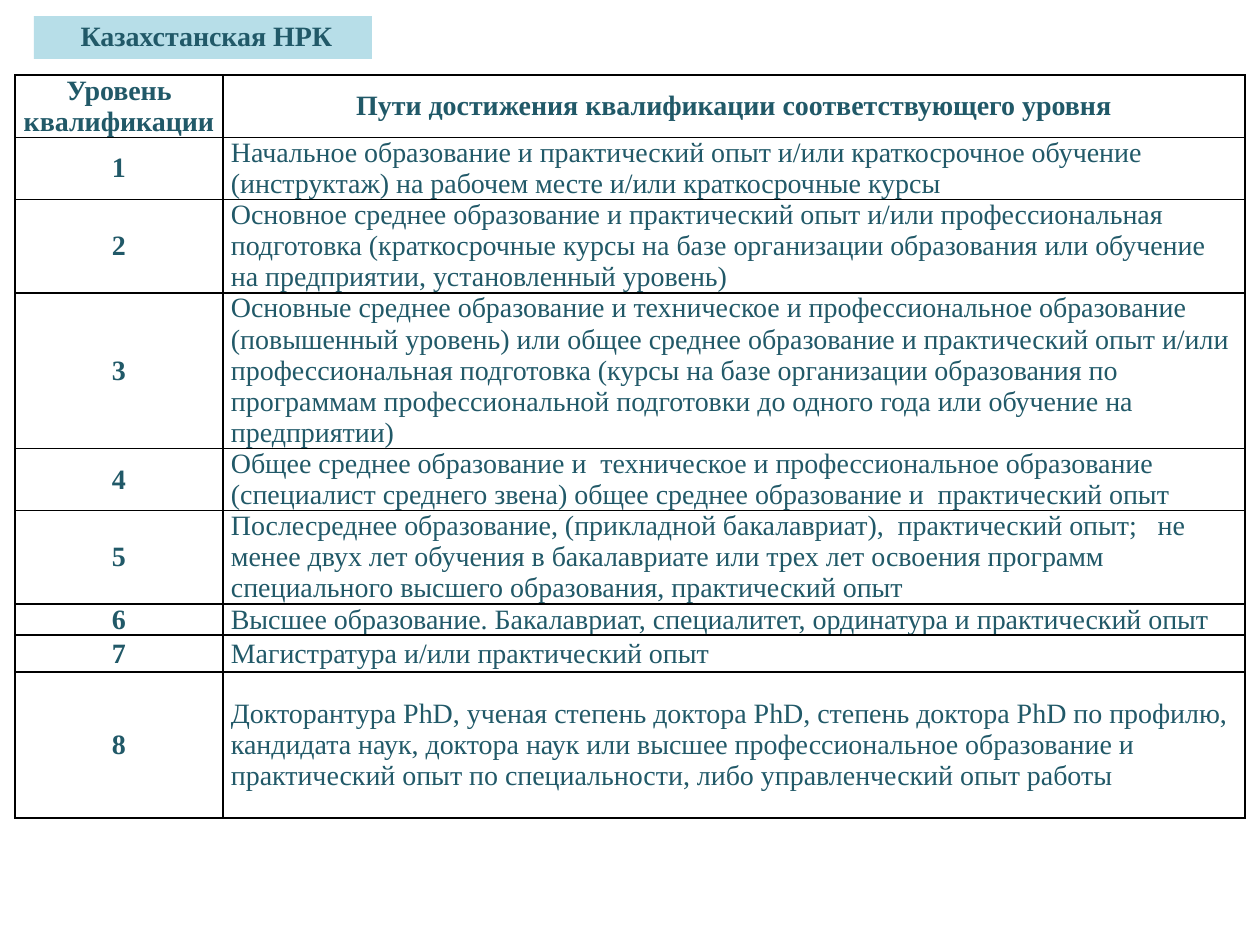
import pptx
import pptx.util
import pptx.dml.color
import pptx.enum.text
import pptx.oxml.ns
import lxml.etree
from dataclasses import dataclass

SCALE = 914400 // 126  # EMU in one px


@dataclass(frozen=True)
class Theme:
    font: str = "Times New Roman"
    size: int = 16
    ink: str = "215968"
    band: str = "B7DEE8"
    rule: str = "000000"
    width: int = 1


THEME = Theme()
ALIGN = pptx.enum.text.PP_ALIGN
MIDDLE = pptx.enum.text.MSO_ANCHOR.MIDDLE

TITLE = " Казахстанская НРК"
HEAD = ("Уровень квалификации",
        "Пути достижения квалификации соответствующего уровня")
# Ways to reach each level, from level 1 up
WAYS = [
    "Начальное образование и практический опыт и/или краткосрочное обучение "
    "(инструктаж) на рабочем месте и/или краткосрочные курсы",
    "Основное среднее образование и практический опыт и/или профессиональная "
    "подготовка (краткосрочные курсы на базе организации образования или обучение "
    "на предприятии, установленный уровень)",
    "Основные среднее образование и техническое и профессиональное образование "
    "(повышенный уровень) или общее среднее образование и практический опыт и/или "
    "профессиональная подготовка (курсы на базе организации образования по "
    "программам профессиональной подготовки до одного года или обучение на "
    "предприятии)",
    "Общее среднее образование и  техническое и профессиональное образование  "
    "(специалист среднего звена) общее среднее образование и  практический опыт",
    "Послесреднее образование, (прикладной бакалавриат),  практический опыт;   не "
    "менее двух лет обучения в бакалавриате или трех лет освоения программ "
    "специального высшего образования, практический опыт",
    "Высшее образование. Бакалавриат, специалитет, ординатура и практический опыт",
    "Магистратура и/или практический опыт",
    "Докторантура PhD, ученая степень доктора PhD, степень доктора PhD по профилю, "
    "кандидата наук, доктора наук или высшее профессиональное образование и "
    "практический опыт по специальности, либо управленческий опыт работы",
]
COLS = (208, 1022)
ROWS = (62, 62, 93, 155, 62, 93, 31, 37, 146)


def px(num):
    return pptx.util.Emu(num * SCALE)


def color(code):
    return pptx.dml.color.RGBColor.from_string(code)


def write(frame, text, bold, align):
    frame.text = text
    para = frame.paragraphs[0]
    para.alignment = align
    font = para.runs[0].font
    font.name = THEME.font
    font.size = pptx.util.Pt(THEME.size)
    font.bold = bold
    font.color.rgb = color(THEME.ink)
    return para


def border(cell):
    props = cell._tc.get_or_add_tcPr()
    name = pptx.oxml.ns.qn
    for side in ("a:lnL", "a:lnR", "a:lnT", "a:lnB"):
        line = lxml.etree.SubElement(props, name(side),
                                     w=str(pptx.util.Pt(THEME.width)))
        fill = lxml.etree.SubElement(line, name("a:solidFill"))
        lxml.etree.SubElement(fill, name("a:srgbClr"), val=THEME.rule)


def add_title(slide, text, left, top, width, height):
    title = slide.shapes.title
    title.left, title.top = px(left), px(top)
    title.width, title.height = px(width), px(height)
    title.fill.solid()
    title.fill.fore_color.rgb = color(THEME.band)
    frame = title.text_frame
    frame.word_wrap = True
    frame.auto_size = pptx.enum.text.MSO_AUTO_SIZE.NONE
    frame.vertical_anchor = MIDDLE
    para = write(frame, text, True, ALIGN.CENTER)
    para.line_spacing = 0.9
    para.space_before = pptx.util.Pt(0)


def add_cell(cell, text, bold, align):
    cell.margin_left = cell.margin_right = px(8)
    cell.margin_top = cell.margin_bottom = 0
    cell.vertical_anchor = MIDDLE
    border(cell)
    cell.fill.background()
    write(cell.text_frame, text, bold, align)


def add_grid(slide, left, top):
    data = [HEAD] + [(str(num), way) for num, way in enumerate(WAYS, 1)]
    table = slide.shapes.add_table(len(ROWS), len(COLS), px(left), px(top),
                                   px(sum(COLS)), px(sum(ROWS))).table
    table.first_row = table.horz_banding = False
    for col, width in zip(table.columns, COLS):
        col.width = px(width)
    for row, height in zip(table.rows, ROWS):
        row.height = px(height)
    for i, line in enumerate(data):
        for j, text in enumerate(line):
            # Header row and level numbers are bold and centred
            key = i == 0 or j == 0
            add_cell(table.cell(i, j), text, key,
                     ALIGN.CENTER if key else ALIGN.LEFT)


def main():
    deck = pptx.Presentation()
    deck.slide_width = pptx.util.Inches(10)
    deck.slide_height = pptx.util.Inches(7.5)
    slide = deck.slides.add_slide(deck.slide_layouts[5])
    add_title(slide, TITLE, 34, 16, 338, 43)
    add_grid(slide, 15, 75)
    deck.save("out.pptx")


if __name__ == "__main__":
    main()
